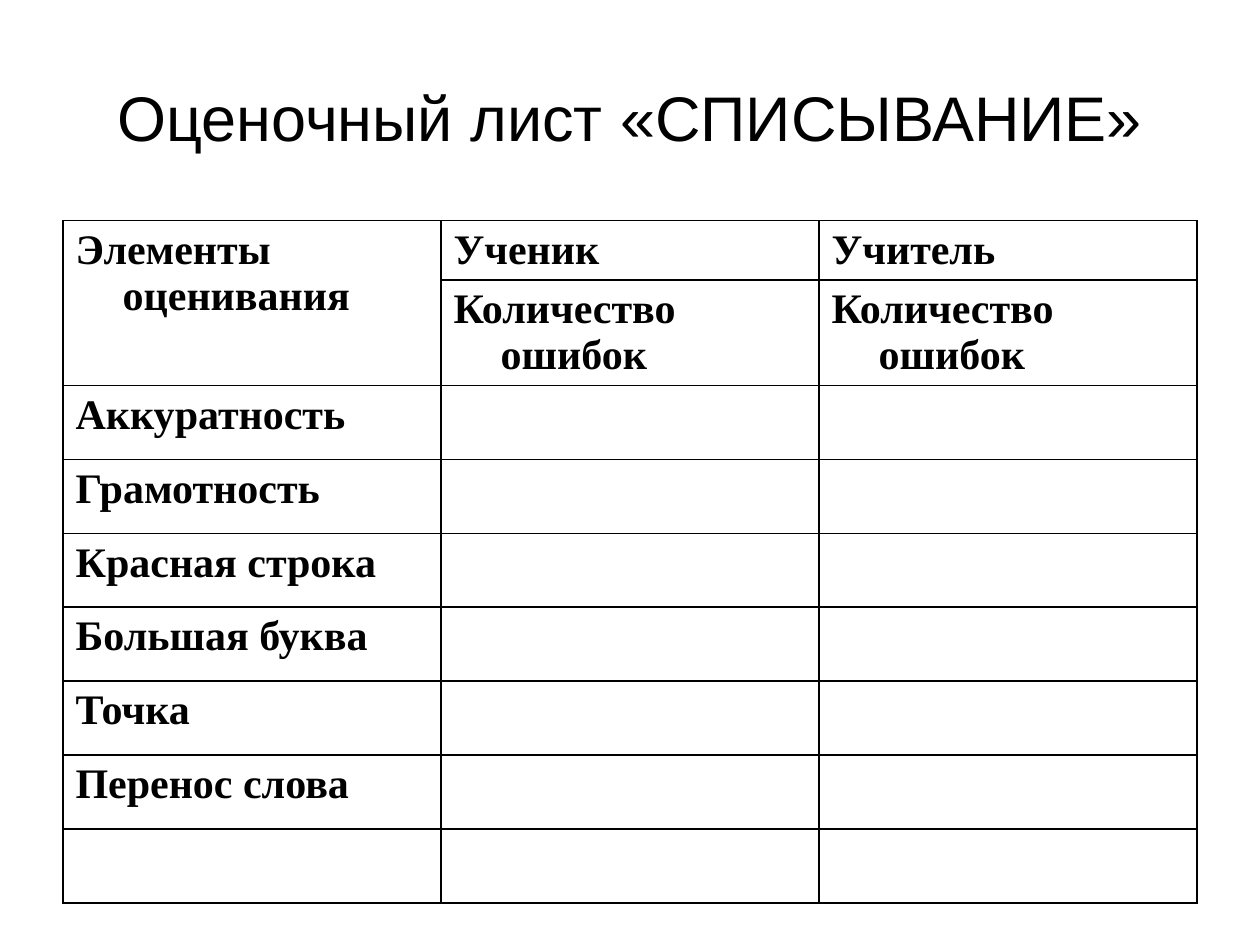
from dataclasses import dataclass

from lxml.etree import SubElement
from pptx import Presentation
from pptx.dml.color import RGBColor
from pptx.enum.text import MSO_ANCHOR, PP_ALIGN
from pptx.oxml.ns import qn
from pptx.util import Cm, Pt


@dataclass(frozen=True)
class Theme:
    ink: str = "000000"
    title_font: str = "Arial"
    title_size: int = 36
    table_font: str = "Times New Roman"
    table_size: int = 24
    border_width: int = 1


THEME = Theme()
MARGIN = Cm(1.27)
CONTENT_WIDTH = Cm(22.86)
HANGING_INDENT = Cm(0.95)

CRITERIA = ["Аккуратность", "Грамотность", "Красная строка",
            "Большая буква", "Точка", "Перенос слова", ""]
SCORE_ROWS = [
    ["Элементы оценивания", "Ученик", "Учитель"],
    ["", "Количество ошибок", "Количество ошибок"],
    *([criterion, "", ""] for criterion in CRITERIA),
]
HEADER_HEIGHTS = [Cm(1.19), Cm(2.13)]
CRITERION_HEIGHT = Cm(1.49)


def add_run(paragraph, text, font_name, size, bold=False):
    run = paragraph.add_run()
    run.text = text
    run.font.name = font_name
    run.font.size = Pt(size)
    run.font.bold = bold
    run.font.color.rgb = RGBColor.from_string(THEME.ink)


def set_title(slide, text):
    title = slide.shapes.title
    title.left, title.top = MARGIN, Cm(0.76)
    title.width, title.height = CONTENT_WIDTH, Cm(3.18)
    frame = title.text_frame
    frame.word_wrap = True
    frame.vertical_anchor = MSO_ANCHOR.MIDDLE
    heading = frame.paragraphs[0]
    heading.alignment = PP_ALIGN.CENTER
    add_run(heading, text, THEME.title_font, THEME.title_size)


def set_borders(cell):
    properties = cell._tc.get_or_add_tcPr()
    for side in ("a:lnL", "a:lnR", "a:lnT", "a:lnB"):
        line = SubElement(properties, qn(side), w=str(Pt(THEME.border_width)))
        fill = SubElement(line, qn("a:solidFill"))
        SubElement(fill, qn("a:srgbClr"), val=THEME.ink)


def fill_cell(cell, text):
    set_borders(cell)
    cell.fill.background()
    if not text:
        return
    label = cell.text_frame.paragraphs[0]
    indents = label._p.get_or_add_pPr()
    indents.set("marL", str(HANGING_INDENT))
    indents.set("indent", str(-HANGING_INDENT))
    add_run(label, text, THEME.table_font, THEME.table_size, bold=True)


def add_score_table(slide):
    heights = HEADER_HEIGHTS + [CRITERION_HEIGHT] * len(CRITERIA)
    table = slide.shapes.add_table(
        len(SCORE_ROWS), len(SCORE_ROWS[0]),
        MARGIN, Cm(4.45), CONTENT_WIDTH, sum(heights)).table
    table.first_row = table.horz_banding = False
    for row, height in zip(table.rows, heights):
        row.height = height
    for row, texts in zip(table.rows, SCORE_ROWS):
        for cell, text in zip(row.cells, texts):
            fill_cell(cell, text)
    table.cell(0, 0).merge(table.cell(1, 0))


def main():
    deck = Presentation()
    deck.slide_width, deck.slide_height = Cm(25.4), Cm(19.05)
    slide = deck.slides.add_slide(deck.slide_layouts[5])
    set_title(slide, "Оценочный лист «СПИСЫВАНИЕ»")
    add_score_table(slide)
    deck.save("out.pptx")


if __name__ == "__main__":
    main()
